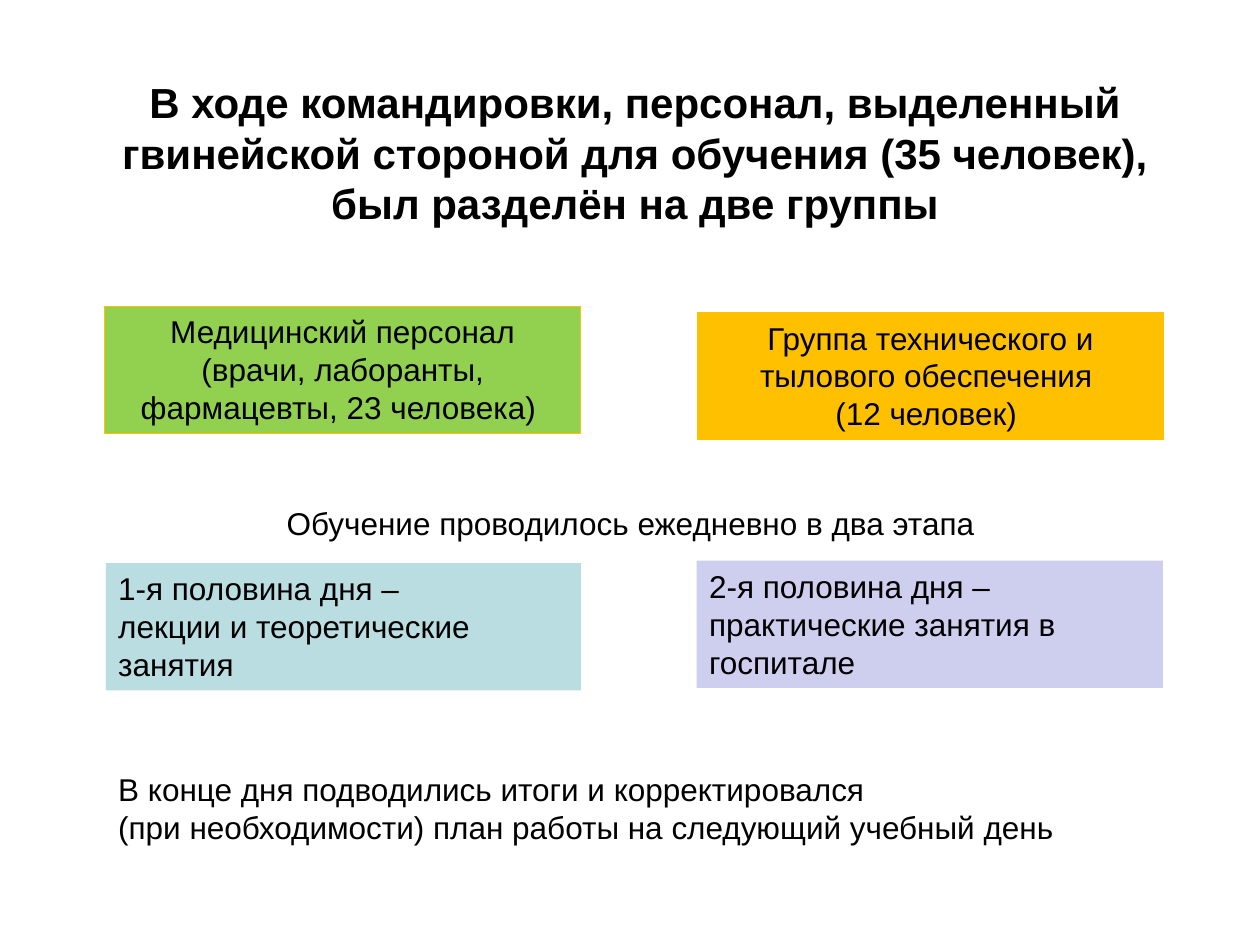
from pptx import Presentation
from pptx import util as u
from pptx.dml.color import RGBColor
from pptx.enum import shapes, text

COLORS = {
    "text": "000000",
    "medical": "92D050",
    "technical": "FFC000",
    "lectures": "BADDE1",
    "practice": "CECEEF",
}
FONT = "Arial"
LEFT = 0.84
FULL_WIDTH = 8.4
BOX_HEIGHT = 1.01


def color(name):
    return RGBColor.from_string(COLORS[name])


def write_text(shape, content, size=18, bold=False, centered=False):
    frame = shape.text_frame
    frame.word_wrap = True
    frame.vertical_anchor = text.MSO_ANCHOR.TOP
    frame.text = content
    for paragraph in frame.paragraphs:
        paragraph.alignment = text.PP_ALIGN.CENTER if centered else text.PP_ALIGN.LEFT
        for run in paragraph.runs:
            run.font.name = FONT
            run.font.size = u.Pt(size)
            run.font.bold = bold
            run.font.color.rgb = color("text")


def add_label(slide, top, height, content, **style):
    shape = slide.shapes.add_textbox(
        u.Inches(LEFT), u.Inches(top), u.Inches(FULL_WIDTH), u.Inches(height))
    write_text(shape, content, **style)


def add_box(slide, left, top, width, fill, content, outline=None, centered=False):
    shape = slide.shapes.add_shape(
        shapes.MSO_SHAPE.RECTANGLE,
        u.Inches(left), u.Inches(top), u.Inches(width), u.Inches(BOX_HEIGHT))
    shape.shadow.inherit = False
    shape.fill.solid()
    shape.fill.fore_color.rgb = color(fill)
    if outline:
        shape.line.color.rgb = color(outline)
        shape.line.width = u.Pt(0.75)
    else:
        shape.line.fill.background()
    write_text(shape, content, centered=centered)


def main():
    presentation = Presentation()
    presentation.slide_width = u.Inches(10)
    presentation.slide_height = u.Inches(7.5)
    slide = presentation.slides.add_slide(presentation.slide_layouts[6])

    add_label(slide, 0.56, 1.31,
              "В ходе командировки, персонал, выделенный гвинейской стороной "
              "для обучения (35 человек), был разделён на две группы",
              size=24, bold=True, centered=True)

    add_box(slide, 0.83, 2.43, 3.78, "medical",
            "Медицинский персонал (врачи, лаборанты, фармацевты, 23 человека) ",
            outline="technical", centered=True)
    add_box(slide, 5.54, 2.48, 3.69, "technical",
            "Группа технического и тылового обеспечения \n(12 человек) ",
            outline="technical", centered=True)

    add_label(slide, 3.95, 0.4,
              "Обучение проводилось ежедневно в два этапа ", centered=True)

    add_box(slide, LEFT, 4.47, 3.77, "lectures",
            "1-я половина дня –\nлекции и теоретические занятия")
    add_box(slide, 5.53, 4.45, 3.7, "practice",
            "2-я половина дня –\nпрактические занятия в госпитале")

    add_label(slide, 6.06, 0.71,
              "В конце дня подводились итоги и корректировался\n"
              "(при необходимости) план работы на следующий учебный день")

    presentation.save("out.pptx")


if __name__ == "__main__":
    main()
